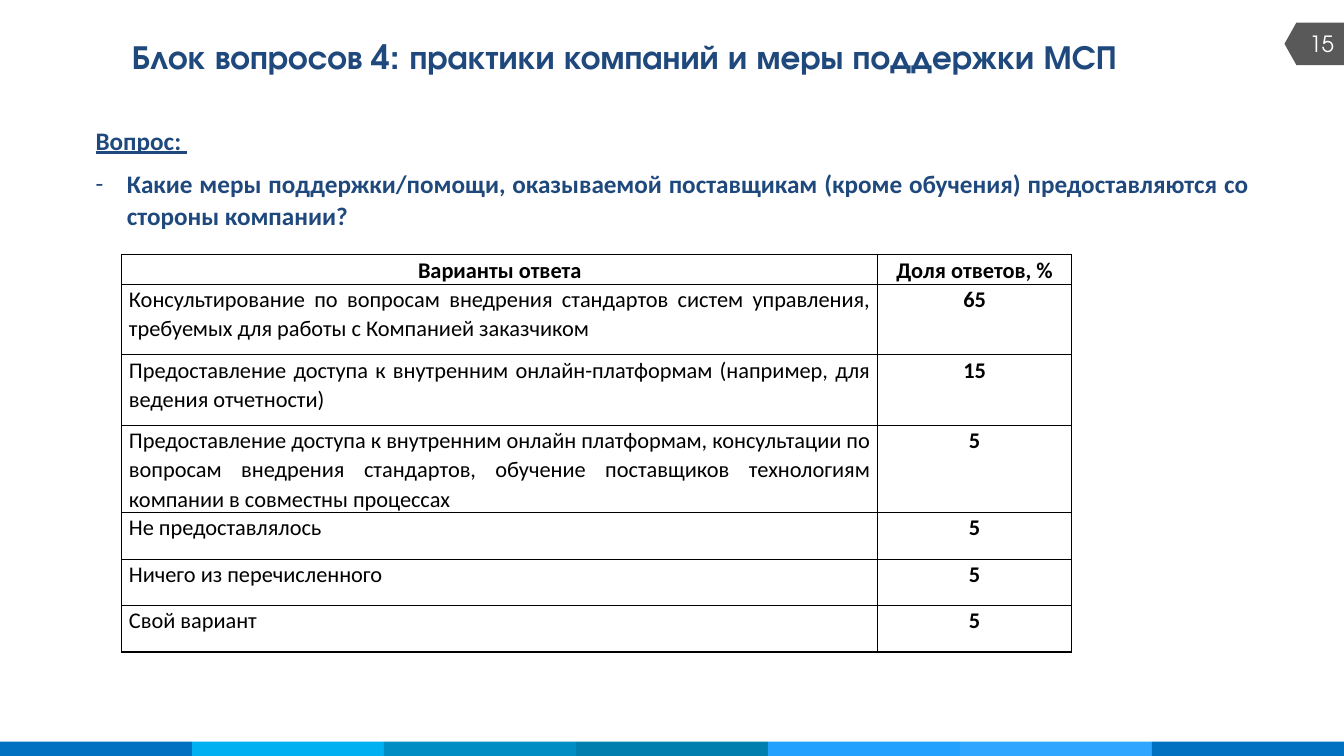
from lxml import etree
from pptx import Presentation
from pptx.dml.color import RGBColor
from pptx.enum.shapes import MSO_SHAPE
from pptx.enum.text import MSO_ANCHOR, MSO_AUTO_SIZE, PP_ALIGN
from pptx.oxml.ns import qn
from pptx.util import Cm, Pt

COLORS = {"navy": "1F497D", "black": "000000", "white": "FFFFFF", "tag": "595959"}
STRIP = ["0070C0", "00B0F0", "008DC3", "007EAE", "23A1FF", "2FA6FF", "0070C0"]
HEAD_FONT, BODY_FONT = "TeX Gyre Adventor", "Calibri"
WIDTH, HEIGHT = 33.87, 19.05

ANSWERS = [
    ("Варианты ответа", "Доля ответов, %"),
    ("Консультирование по вопросам внедрения стандартов систем управления, "
     "требуемых для работы с Компанией заказчиком", "65"),
    ("Предоставление доступа к внутренним онлайн-платформам "
     "(например, для ведения отчетности)", "15"),
    ("Предоставление доступа к внутренним онлайн платформам, консультации "
     "по вопросам внедрения стандартов, обучение поставщиков технологиям "
     "компании в совместны процессах", "5"),
    ("Не предоставлялось", "5"),
    ("Ничего из перечисленного", "5"),
    ("Свой вариант", "5"),
]
COLUMN_WIDTHS = [19.05, 4.88]
ROW_HEIGHTS = [0.74, 1.78, 1.78, 2.2, 1.17, 1.17, 1.17]


def style(p, font, size, color, bold=False):
    for r in p.runs:
        r.font.name, r.font.size, r.font.bold = font, Pt(size), bold
        r.font.color.rgb = RGBColor.from_string(COLORS[color])


def add_block(s, preset, box, color):
    sp = s.shapes.add_shape(preset, *map(Cm, box))
    sp.shadow.inherit = False
    sp.fill.solid()
    sp.fill.fore_color.rgb = RGBColor.from_string(color)
    sp.line.fill.background()
    return sp


def add_strip(s, left, top, width, height):
    step = width / len(STRIP)
    for i, color in enumerate(STRIP):
        add_block(s, MSO_SHAPE.RECTANGLE, (left + i * step, top, step, height), color)


def add_page_tag(s, left, top, width, height):
    # The connector shape points down, so it is turned to point left.
    box = (left + (width - height) / 2, top - (width - height) / 2, height, width)
    sp = add_block(s, MSO_SHAPE.FLOWCHART_OFFPAGE_CONNECTOR, box, COLORS["tag"])
    sp.rotation = 90
    number = s.shapes.add_textbox(Cm(left), Cm(top), Cm(width), Cm(height))
    tf = number.text_frame
    tf.word_wrap = True
    tf.vertical_anchor = MSO_ANCHOR.MIDDLE
    tf.text = "15"
    p = tf.paragraphs[0]
    p.alignment = PP_ALIGN.RIGHT
    style(p, HEAD_FONT, 16, "white")


def set_title(s, left, top, width, height):
    sp = s.shapes.title
    sp.left, sp.top, sp.width, sp.height = map(Cm, (left, top, width, height))
    tf = sp.text_frame
    tf.text = "Блок вопросов 4: практики компаний и меры поддержки МСП"
    tf.word_wrap = True
    tf.auto_size = MSO_AUTO_SIZE.NONE
    tf.vertical_anchor = MSO_ANCHOR.TOP
    p = tf.paragraphs[0]
    p.alignment, p.line_spacing = PP_ALIGN.LEFT, 0.8
    style(p, HEAD_FONT, 24, "navy", True)


def add_question(s, left, top, width, height):
    tf = s.shapes.add_textbox(Cm(left), Cm(top), Cm(width), Cm(height)).text_frame
    tf.word_wrap = True
    tf.text = ("Вопрос: \nКакие меры поддержки/помощи, оказываемой поставщикам "
               "(кроме обучения) предоставляются со стороны компании?")
    label, question = tf.paragraphs
    pPr = question._p.get_or_add_pPr()
    pPr.set("marL", str(Cm(0.79)))
    pPr.set("indent", str(-Cm(0.79)))
    etree.SubElement(pPr, qn("a:buFont")).set("typeface", BODY_FONT)
    etree.SubElement(pPr, qn("a:buChar")).set("char", "-")
    for p in (label, question):
        p.alignment, p.line_spacing, p.space_after = PP_ALIGN.JUSTIFY, 1.07, Pt(8)
        style(p, BODY_FONT, 18, "navy", True)
    label.runs[0].font.underline = True


def add_borders(cell):
    tcPr = cell._tc.get_or_add_tcPr()
    for side in ("lnL", "lnR", "lnT", "lnB"):
        ln = etree.SubElement(tcPr, qn(f"a:{side}"), w=str(Pt(1)))
        fill = etree.SubElement(ln, qn("a:solidFill"))
        etree.SubElement(fill, qn("a:srgbClr"), val=COLORS["black"])


def add_answers(s, left, top):
    frame = s.shapes.add_table(len(ANSWERS), len(COLUMN_WIDTHS), Cm(left), Cm(top),
                               Cm(sum(COLUMN_WIDTHS)), Cm(sum(ROW_HEIGHTS)))
    table = frame.table
    table.horz_banding = table.first_row = False
    for column, width in zip(table.columns, COLUMN_WIDTHS):
        column.width = Cm(width)
    for i, (answer, height) in enumerate(zip(ANSWERS, ROW_HEIGHTS)):
        table.rows[i].height = Cm(height)
        for j, text in enumerate(answer):
            cell = table.cell(i, j)
            add_borders(cell)
            cell.fill.background()
            cell.margin_left = cell.margin_right = Cm(0.18)
            cell.margin_top = cell.margin_bottom = 0
            cell.text_frame.text = text
            strong = i == 0 or j == 1
            p = cell.text_frame.paragraphs[0]
            p.alignment = PP_ALIGN.CENTER if strong else PP_ALIGN.JUSTIFY
            p.line_spacing = 1.07
            style(p, BODY_FONT, 16, "black", strong)


def main():
    prs = Presentation()
    prs.slide_width, prs.slide_height = Cm(WIDTH), Cm(HEIGHT)
    s = prs.slides.add_slide(prs.slide_layouts[5])
    s.background.fill.solid()
    s.background.fill.fore_color.rgb = RGBColor.from_string(COLORS["white"])
    add_strip(s, 0, HEIGHT - 0.36, WIDTH, 0.36)
    add_page_tag(s, WIDTH - 1.5, 0.57, 1.5, 1.07)
    set_title(s, 3.07, 0.97, 27.74, 1.32)
    add_question(s, 2.16, 2.97, 29.57, 2.97)
    add_answers(s, 3.07, 6.42)
    prs.save("out.pptx")


if __name__ == "__main__":
    main()
